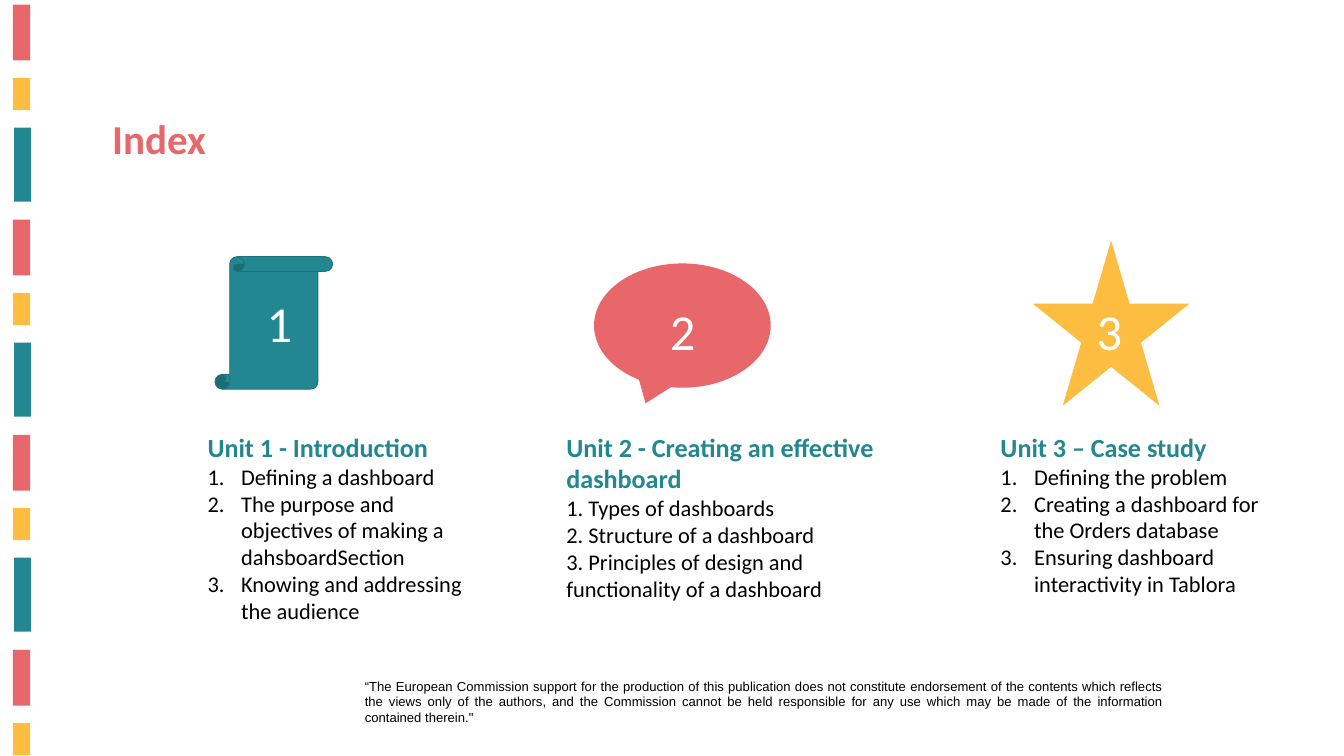
"""Build the course index slide with three numbered units."""

from lxml.etree import SubElement
from pptx import Presentation
from pptx.dml.color import RGBColor
from pptx.enum.shapes import MSO_SHAPE
from pptx.enum.text import MSO_ANCHOR, MSO_AUTO_SIZE, PP_ALIGN
from pptx.oxml.ns import qn
from pptx.util import Inches, Pt

CORAL, YELLOW, TEAL = "E8676A", "FDBD40", "238791"
SLIDE_WIDTH, SLIDE_HEIGHT = 20, 11.25

STRIPE_PERIOD = 3.2
STRIPES = [
    (0.19, 0.07, 0.26, 0.83, CORAL),
    (0.19, 1.16, 0.26, 0.48, YELLOW),
    (0.21, 1.9, 0.25, 1.1, TEAL),
]

UNITS = [
    {
        "heading": "Unit 1 - Introduction",
        "topics": [
            "Defining a dashboard",
            "The purpose and objectives of making a dahsboardSection",
            "Knowing and addressing the audience",
        ],
        "numbered": True,
        "text_box": (2.99, 6.37, 4.3, 3.47),
        "icon": (MSO_SHAPE.VERTICAL_SCROLL, 3.2, 3.82, 1.75, 1.97, TEAL, "1E737C"),
        "number_box": (3.87, 4.3, 1.58, 1.01),
    },
    {
        "heading": "Unit 2 - Creating an effective dashboard",
        "topics": [
            "1. Types of dashboards",
            "2. Structure of a dashboard",
            "3. Principles of design and functionality of a dashboard",
        ],
        "numbered": False,
        "text_box": (8.33, 6.37, 5.08, 2.66),
        "icon": (MSO_SHAPE.OVAL_CALLOUT, 8.84, 3.92, 2.63, 1.85, CORAL, None),
        "number_box": (9.87, 4.41, 1.08, 1.01),
    },
    {
        "heading": "Unit 3 – Case study",
        "topics": [
            "Defining the problem",
            "Creating a dashboard for the Orders database",
            "Ensuring dashboard interactivity in Tablora",
        ],
        "numbered": True,
        "text_box": (14.79, 6.37, 4.3, 2.59),
        "icon": (MSO_SHAPE.STAR_5_POINT, 15.37, 3.58, 2.33, 2.46, YELLOW, None),
        "number_box": (16.22, 4.41, 1.5, 1.01),
    },
]

DISCLAIMER = (
    "“The European Commission support for the production of this publication does not "
    "constitute endorsement of the contents which reflects the views only of the authors, "
    "and the Commission cannot be held responsible for any use which may be made of the "
    "information contained therein.\""
)


def color(hex_string):
    return RGBColor.from_string(hex_string)


def add_filled_shape(slide, kind, left, top, width, height, fill, line=None):
    shape = slide.shapes.add_shape(
        kind, Inches(left), Inches(top), Inches(width), Inches(height)
    )
    shape.shadow.inherit = False
    shape.fill.solid()
    shape.fill.fore_color.rgb = color(fill)
    if line:
        shape.line.color.rgb = color(line)
        shape.line.width = Pt(1)
    else:
        shape.line.fill.background()


def add_text_frame(slide, box):
    text_frame = slide.shapes.add_textbox(*map(Inches, box)).text_frame
    text_frame.word_wrap = True
    return text_frame


def add_run(paragraph, text, size, hex_string, bold=False, font="Calibri"):
    run = paragraph.add_run()
    run.text = text
    run.font.name = font
    run.font.size = Pt(size)
    run.font.bold = bold
    run.font.color.rgb = color(hex_string)


def number_paragraph(paragraph):
    properties = paragraph._p.get_or_add_pPr()
    properties.set("marL", str(Inches(0.5)))
    properties.set("indent", str(Inches(-0.5)))
    SubElement(properties, qn("a:buFont"), typeface="+mj-lt")
    SubElement(properties, qn("a:buAutoNum"), type="arabicPeriod")


def add_stripes(slide):
    for left, first_top, width, height, fill in STRIPES:
        top = first_top
        while top < SLIDE_HEIGHT:
            visible_height = min(height, SLIDE_HEIGHT - top)
            add_filled_shape(
                slide, MSO_SHAPE.RECTANGLE, left, top, width, visible_height, fill
            )
            top += STRIPE_PERIOD


def add_title(slide):
    title = slide.shapes.title
    title.left, title.top = Inches(1.57), Inches(1.64)
    title.width, title.height = Inches(6.77), Inches(0.84)
    title.text_frame.auto_size = MSO_AUTO_SIZE.NONE
    title.text_frame.vertical_anchor = MSO_ANCHOR.TOP
    paragraph = title.text_frame.paragraphs[0]
    paragraph.alignment = PP_ALIGN.LEFT
    add_run(paragraph, "Index", 44, "E7686A", bold=True)


def add_unit(slide, number, unit):
    add_filled_shape(slide, *unit["icon"])
    number_frame = add_text_frame(slide, unit["number_box"])
    add_run(number_frame.paragraphs[0], str(number), 54, "FFFFFF")

    text_frame = add_text_frame(slide, unit["text_box"])
    add_run(text_frame.paragraphs[0], unit["heading"], 28, TEAL, bold=True)
    for topic in unit["topics"]:
        paragraph = text_frame.add_paragraph()
        if unit["numbered"]:
            number_paragraph(paragraph)
        add_run(paragraph, topic, 24, "000000")


def add_disclaimer(slide):
    paragraph = add_text_frame(slide, (5.33, 10.04, 12.08, 0.81)).paragraphs[0]
    paragraph.alignment = PP_ALIGN.JUSTIFY
    add_run(paragraph, DISCLAIMER, 14, "000000", font="Arial")


def main():
    presentation = Presentation()
    presentation.slide_width = Inches(SLIDE_WIDTH)
    presentation.slide_height = Inches(SLIDE_HEIGHT)
    slide = presentation.slides.add_slide(presentation.slide_layouts[5])
    add_stripes(slide)
    add_disclaimer(slide)
    add_title(slide)
    for number, unit in enumerate(UNITS, start=1):
        add_unit(slide, number, unit)
    presentation.save("out.pptx")


if __name__ == "__main__":
    main()
